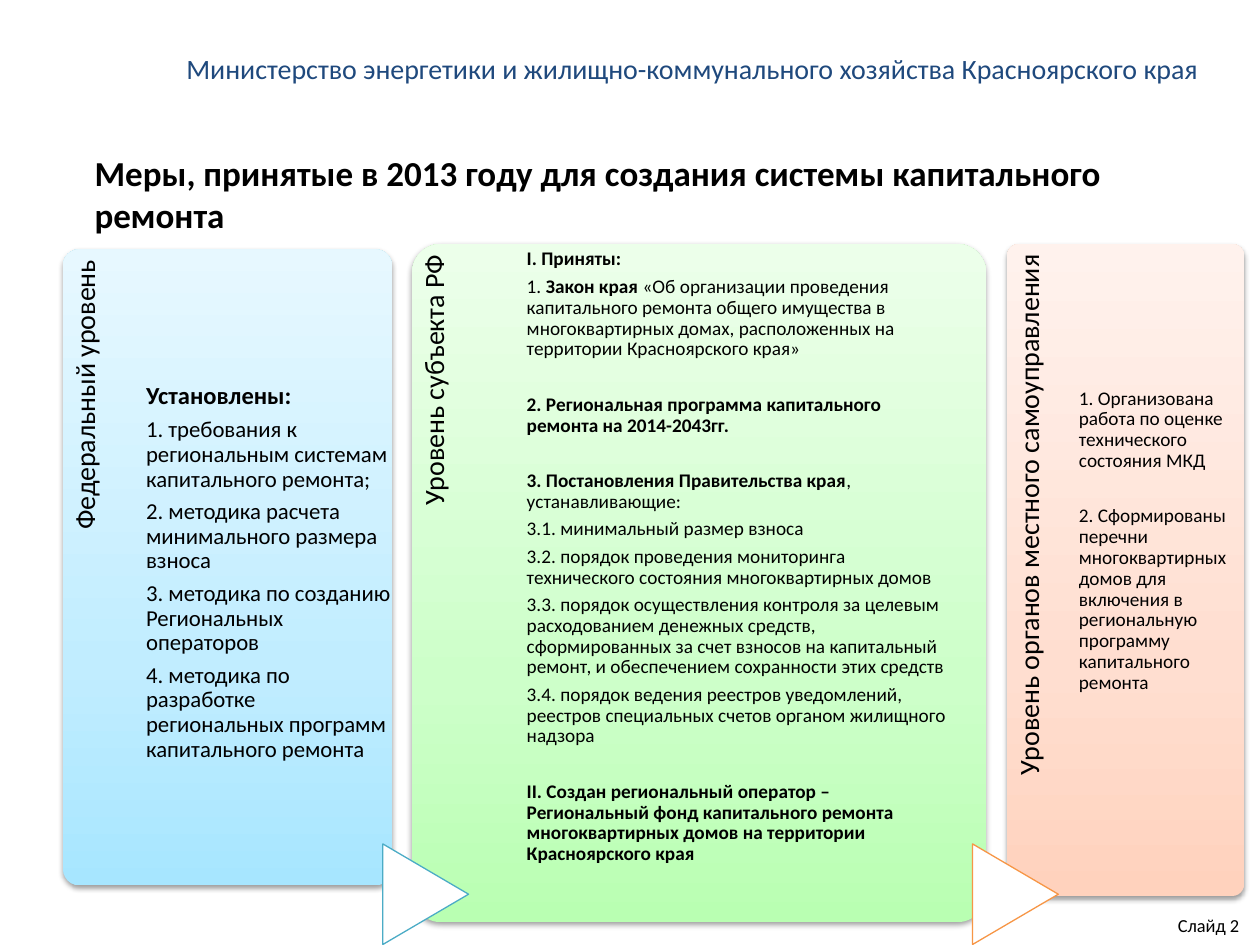
import copy

import pptx
import pptx.dml.color
import pptx.enum.shapes
import pptx.enum.text
import pptx.oxml
import pptx.oxml.ns
import pptx.util

Pt = pptx.util.Pt
RGB = pptx.dml.color.RGBColor
SHAPE = pptx.enum.shapes.MSO_SHAPE
ALIGN = pptx.enum.text.PP_ALIGN
ANCHOR = pptx.enum.text.MSO_ANCHOR
NO_FIT = pptx.enum.text.MSO_AUTO_SIZE.NONE

BLACK = RGB(0x00, 0x00, 0x00)
WHITE = RGB(0xFF, 0xFF, 0xFF)
NAVY = RGB(0x1F, 0x49, 0x7D)
TEAL = RGB(0x4B, 0xAC, 0xC6)
ORANGE = RGB(0xF7, 0x96, 0x46)
BLUES = RGB(0xA7, 0xE6, 0xFF), RGB(0xC1, 0xED, 0xFF), RGB(0xE7, 0xF8, 0xFF)
GREENS = RGB(0xB9, 0xFF, 0xB2), RGB(0xCD, 0xFF, 0xC9), RGB(0xEC, 0xFF, 0xEA)
PEACHES = RGB(0xFF, 0xD2, 0xBD), RGB(0xFF, 0xDE, 0xD0), RGB(0xFF, 0xF2, 0xED)
STOPS = 0, 0.35, 1
SECTION_GAP = 16

SHADOW = (
    '<a:effectLst %s><a:outerShdw blurRad="40000" dist="20000" dir="5400000" rotWithShape="0">'
    '<a:srgbClr val="000000"><a:alpha val="38000"/></a:srgbClr></a:outerShdw></a:effectLst>'
    % pptx.oxml.ns.nsdecls("a")
)

FEDERAL = [
    (14, 0, [("Установлены:", True)]),
    (13, 0, [("1. требования к региональным системам капитального ремонта;", False)]),
    (13, 0, [("2. методика расчета минимального размера взноса", False)]),
    (13, 0, [("3. методика по созданию Региональных операторов", False)]),
    (13, 0, [("4. методика по разработке региональных программ капитального ремонта", False)]),
]
REGIONAL = [
    (11, 0, [("I. Приняты:", True)]),
    (11, 0, [("1. ", False), ("Закон края ", True),
             ("«Об организации проведения капитального ремонта общего имущества в "
              "многоквартирных домах, расположенных на территории Красноярского края»", False)]),
    (11, SECTION_GAP, [("2. Региональная программа капитального ремонта на 2014-2043гг.", True)]),
    (11, SECTION_GAP, [("3. Постановления Правительства края", True), (", устанавливающие:", False)]),
    (11, 0, [("3.1. минимальный размер взноса", False)]),
    (11, 0, [("3.2. порядок проведения мониторинга технического состояния "
              "многоквартирных домов", False)]),
    (11, 0, [("3.3. порядок осуществления контроля за целевым расходованием денежных средств, "
              "сформированных за счет взносов на капитальный ремонт, и обеспечением "
              "сохранности этих средств", False)]),
    (11, 0, [("3.4. порядок ведения реестров уведомлений, реестров специальных счетов "
              "органом жилищного надзора", False)]),
    (11, SECTION_GAP, [("II. Создан региональный оператор – Региональный фонд капитального ремонта "
                        "многоквартирных домов на территории Красноярского края", True)]),
]
LOCAL = [
    (11, 0, [("1. Организована работа по оценке технического состояния МКД", False)]),
    (11, SECTION_GAP, [("2. Сформированы перечни многоквартирных домов для включения в "
                        "региональную программу капитального ремонта", False)]),
]


def set_all(obj, values):
    """Set every attribute named in a dict."""
    for name, value in values.items():
        setattr(obj, name, value)


def add_run(p, text, size, color=BLACK, bold=False):
    """Add a formatted run to a paragraph."""
    r = p.add_run()
    r.text = text
    set_all(r.font, {"name": "Calibri", "size": Pt(size), "bold": bold})
    r.font.color.rgb = color


def add_box(slide, left, top, width, height, margins):
    """Add a wrapping text box with margins given left, top, right, bottom."""
    s = slide.shapes.add_textbox(Pt(left), Pt(top), Pt(width), Pt(height))
    sides = "margin_left", "margin_top", "margin_right", "margin_bottom"
    set_all(s.text_frame, {"word_wrap": True, "auto_size": NO_FIT})
    set_all(s.text_frame, dict(zip(sides, map(Pt, margins))))
    return s


def add_line(slide, box, text, size, color):
    """Add a single line of text."""
    s = add_box(slide, *box, (7.2, 3.6, 7.2, 3.6))
    add_run(s.text_frame.paragraphs[0], text, size, color)


def add_title(slide, box, text):
    """Place and format the slide title."""
    s = slide.shapes.title
    set_all(s, dict(zip(("left", "top", "width", "height"), map(Pt, box))))
    set_all(s.text_frame, {"word_wrap": True, "auto_size": NO_FIT, "vertical_anchor": ANCHOR.TOP})
    p = s.text_frame.paragraphs[0]
    p.alignment = ALIGN.LEFT
    add_run(p, text, 20, bold=True)


def add_panel(slide, box, colors):
    """Add a rounded panel with a vertical gradient and a soft shadow."""
    s = slide.shapes.add_shape(SHAPE.ROUNDED_RECTANGLE, *map(Pt, box))
    s.adjustments[0] = 0.05
    s.line.fill.background()
    s.fill.gradient()
    s.fill.gradient_angle = 90
    stops = s._element.spPr.find(".//" + pptx.oxml.ns.qn("a:gsLst"))
    stops.insert(1, copy.deepcopy(stops[0]))
    for stop, position, color in zip(s.fill.gradient_stops, STOPS, colors):
        stop.position = position
        stop.color.rgb = color
    s._element.spPr.append(pptx.oxml.parse_xml(SHADOW))


def add_side_label(slide, panel, text):
    """Add a label that reads upwards along the left edge of a panel."""
    left, top, width, height = panel
    length, depth = 0.82 * height, 0.2 * width
    s = add_box(slide, left + (depth - length) / 2, top + (length - depth) / 2,
                length, depth, (0, 4.5, 6, 0))
    s.rotation = 270
    p = s.text_frame.paragraphs[0]
    set_all(p, {"alignment": ALIGN.RIGHT, "line_spacing": 0.9})
    add_run(p, text, 16)


def add_body(slide, box, paragraphs):
    """Add the measures listed in a panel."""
    tf = add_box(slide, *box, (0, 0, 0, 0)).text_frame
    for i, (size, before, runs) in enumerate(paragraphs):
        p = tf.add_paragraph() if i else tf.paragraphs[0]
        set_all(p, {"line_spacing": 0.9, "space_before": Pt(before), "space_after": Pt(0.35 * size)})
        for text, bold in runs:
            add_run(p, text, size, bold=bold)


def add_arrow(slide, left, color):
    """Add a white triangle pointing to the next panel."""
    s = slide.shapes.add_shape(SHAPE.FLOWCHART_EXTRACT, Pt(left), Pt(486.5), Pt(57.5), Pt(49))
    s.rotation = 90
    s.shadow.inherit = False
    s.fill.solid()
    s.fill.fore_color.rgb = WHITE
    s.line.color.rgb = color
    s.line.width = Pt(0.75)


def main():
    """Build the slide and save it."""
    prs = pptx.Presentation()
    set_all(prs, {"slide_width": Pt(720), "slide_height": Pt(540)})
    slide = prs.slides.add_slide(prs.slide_layouts[5])
    add_title(slide, (46.8, 82.8, 664, 32), "Меры, принятые в 2013 году для создания системы капитального ремонта")
    add_line(slide, (666, 519, 54, 20), "Слайд 2", 10.5, BLACK)
    add_line(slide, (99.4, 26, 600, 26.6), "Министерство энергетики и жилищно-коммунального хозяйства Красноярского края",
             16, NAVY)
    panels = [
        ((36, 142.5, 188, 363.5), BLUES, "Федеральный уровень", (83.5, 219, 141, 260), FEDERAL),
        ((235.5, 139.5, 328, 387.5), GREENS, "Уровень субъекта РФ", (301, 142.5, 244, 380), REGIONAL),
        ((575.5, 139.5, 135.5, 372.5), PEACHES, "Уровень органов местного самоуправления",
         (616.5, 222, 100.5, 240), LOCAL),
    ]
    for panel, colors, label, body, paragraphs in panels:
        add_panel(slide, panel, colors)
        add_side_label(slide, panel, label)
        add_body(slide, body, paragraphs)
    for left, color in ((214.5, TEAL), (551.5, ORANGE)):
        add_arrow(slide, left, color)
    prs.save("out.pptx")


if __name__ == "__main__":
    main()
